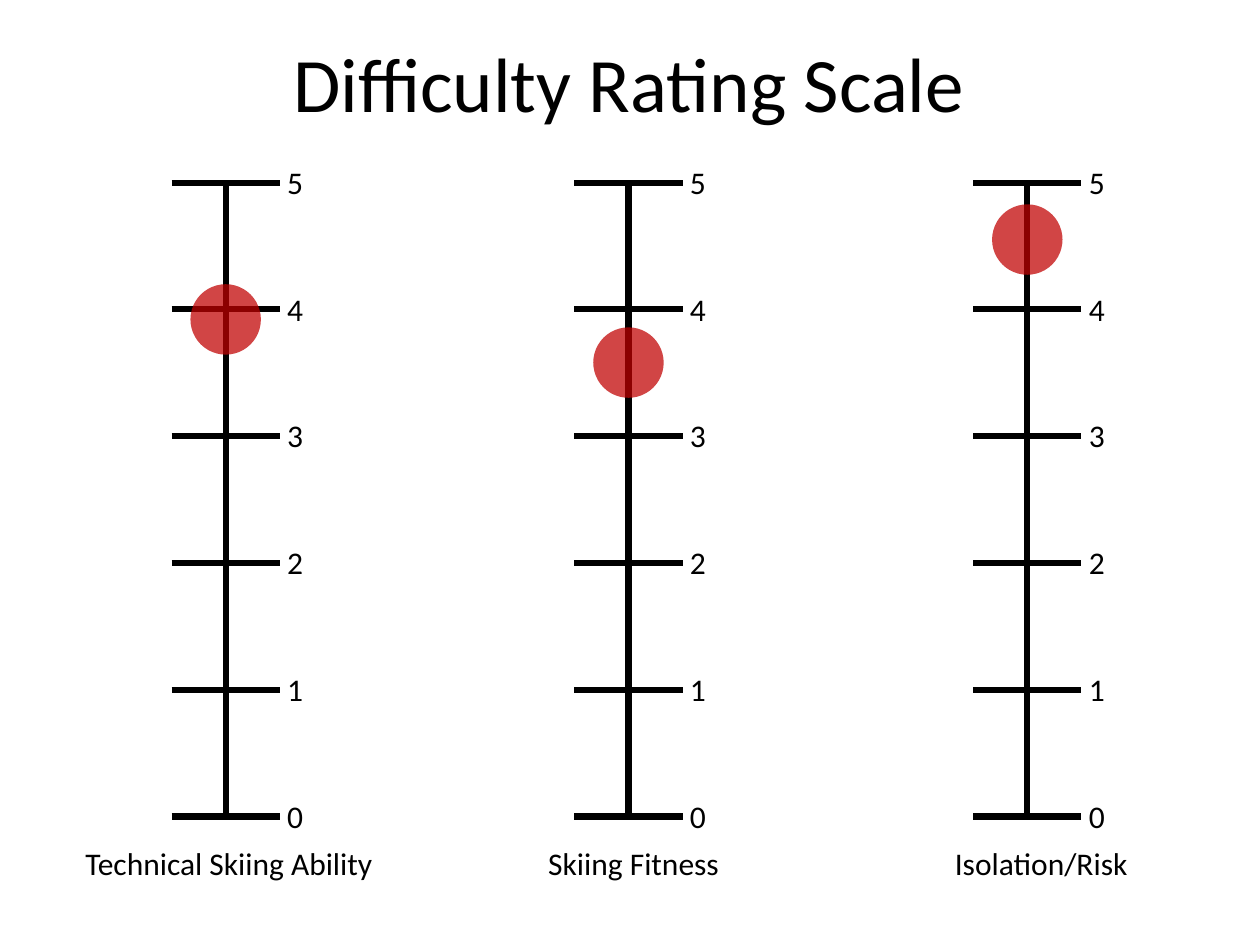
from dataclasses import dataclass

from lxml import etree
from pptx import Presentation
from pptx.dml.color import RGBColor
from pptx.enum.shapes import MSO_CONNECTOR, MSO_SHAPE
from pptx.enum.text import MSO_ANCHOR, MSO_AUTO_SIZE, PP_ALIGN
from pptx.oxml.ns import qn
from pptx.util import Cm, Pt

STRAIGHT = MSO_CONNECTOR.STRAIGHT
OVAL = MSO_SHAPE.OVAL
LEFT, CENTER = PP_ALIGN.LEFT, PP_ALIGN.CENTER
TOP, MIDDLE = MSO_ANCHOR.TOP, MSO_ANCHOR.MIDDLE
FIT_SHAPE, NO_FIT = MSO_AUTO_SIZE.SHAPE_TO_FIT_TEXT, MSO_AUTO_SIZE.NONE


@dataclass(frozen=True)
class Theme:
    font: str = "Calibri"
    ink: RGBColor = RGBColor(0x00, 0x00, 0x00)
    marker: RGBColor = RGBColor(0xC0, 0x00, 0x00)
    marker_opacity: int = 73
    title_size: int = 44
    text_size: int = 18
    line_width: float = 3.5


@dataclass(frozen=True)
class Rating:
    caption: str
    score: float
    axis_x: float
    caption_left: float
    caption_width: float
    caption_align: PP_ALIGN


THEME = Theme()

# Scale geometry, in centimetres
MAX_SCORE = 5
SCALE_TOP = 3.68
SCALE_BOTTOM = 16.46
TICK_HALF = 1.09
MARKER_SIZE = 1.42
TEXT_HEIGHT = 1.02
CAPTION_TOP = 16.89

RATINGS = [
    Rating("Technical Skiing Ability", 3.92, 4.55, 1.47, 6.96, LEFT),
    Rating("Skiing Fitness", 3.58, 12.67, 10.31, 4.93, CENTER),
    Rating("Isolation/Risk", 4.55, 20.71, 19, 4.93, LEFT),
]


def score_y(score):
    return SCALE_BOTTOM - score * (SCALE_BOTTOM - SCALE_TOP) / MAX_SCORE


def add_text(shapes, text, left, top, width, height=TEXT_HEIGHT,
             size=THEME.text_size, align=LEFT, anchor=TOP, fit=FIT_SHAPE):
    box = shapes.add_textbox(Cm(left), Cm(top), Cm(width), Cm(height))
    frame = box.text_frame
    frame.text = text
    frame.word_wrap = True
    frame.auto_size = fit
    frame.vertical_anchor = anchor
    paragraph = frame.paragraphs[0]
    paragraph.alignment = align
    font = paragraph.runs[0].font
    font.name = THEME.font
    font.size = Pt(size)
    font.color.rgb = THEME.ink


def add_line(shapes, x1, y1, x2, y2):
    line = shapes.add_connector(STRAIGHT, Cm(x1), Cm(y1), Cm(x2), Cm(y2))
    line.line.color.rgb = THEME.ink
    line.line.width = Pt(THEME.line_width)
    etree.SubElement(line._element.spPr, qn("a:effectLst"))


def add_scale(slide, x):
    scale = slide.shapes.add_group_shape().shapes
    add_line(scale, x, SCALE_TOP, x, SCALE_BOTTOM)
    for score in range(MAX_SCORE, -1, -1):
        y = score_y(score)
        add_line(scale, x - TICK_HALF, y, x + TICK_HALF, y)
        add_text(scale, str(score), x + 0.99, y - 0.52, 0.84)


def add_marker(slide, x, score):
    radius = MARKER_SIZE / 2
    marker = slide.shapes.add_shape(
        OVAL, Cm(x - radius), Cm(score_y(score) - radius),
        Cm(MARKER_SIZE), Cm(MARKER_SIZE))
    marker.shadow.inherit = False
    marker.line.fill.background()
    marker.fill.solid()
    marker.fill.fore_color.rgb = THEME.marker
    # Transparency
    color = marker._element.spPr.find(qn("a:solidFill")).find(qn("a:srgbClr"))
    etree.SubElement(color, qn("a:alpha"), val=str(THEME.marker_opacity * 1000))


def main():
    deck = Presentation()
    deck.slide_width, deck.slide_height = Cm(25.4), Cm(19.05)
    slide = deck.slides.add_slide(deck.slide_layouts[6])

    # Captions below the scales
    for rating in RATINGS:
        add_text(slide.shapes, rating.caption, rating.caption_left, CAPTION_TOP,
                 rating.caption_width, align=rating.caption_align)

    # Scales, then the score markers over them
    for rating in RATINGS:
        add_scale(slide, rating.axis_x)
    for rating in reversed(RATINGS):
        add_marker(slide, rating.axis_x, rating.score)

    # Title
    add_text(slide.shapes, "Difficulty Rating Scale", 1.25, 0.05, 22.86, 3.18,
             size=THEME.title_size, align=CENTER, anchor=MIDDLE, fit=NO_FIT)

    deck.save("out.pptx")


if __name__ == "__main__":
    main()
